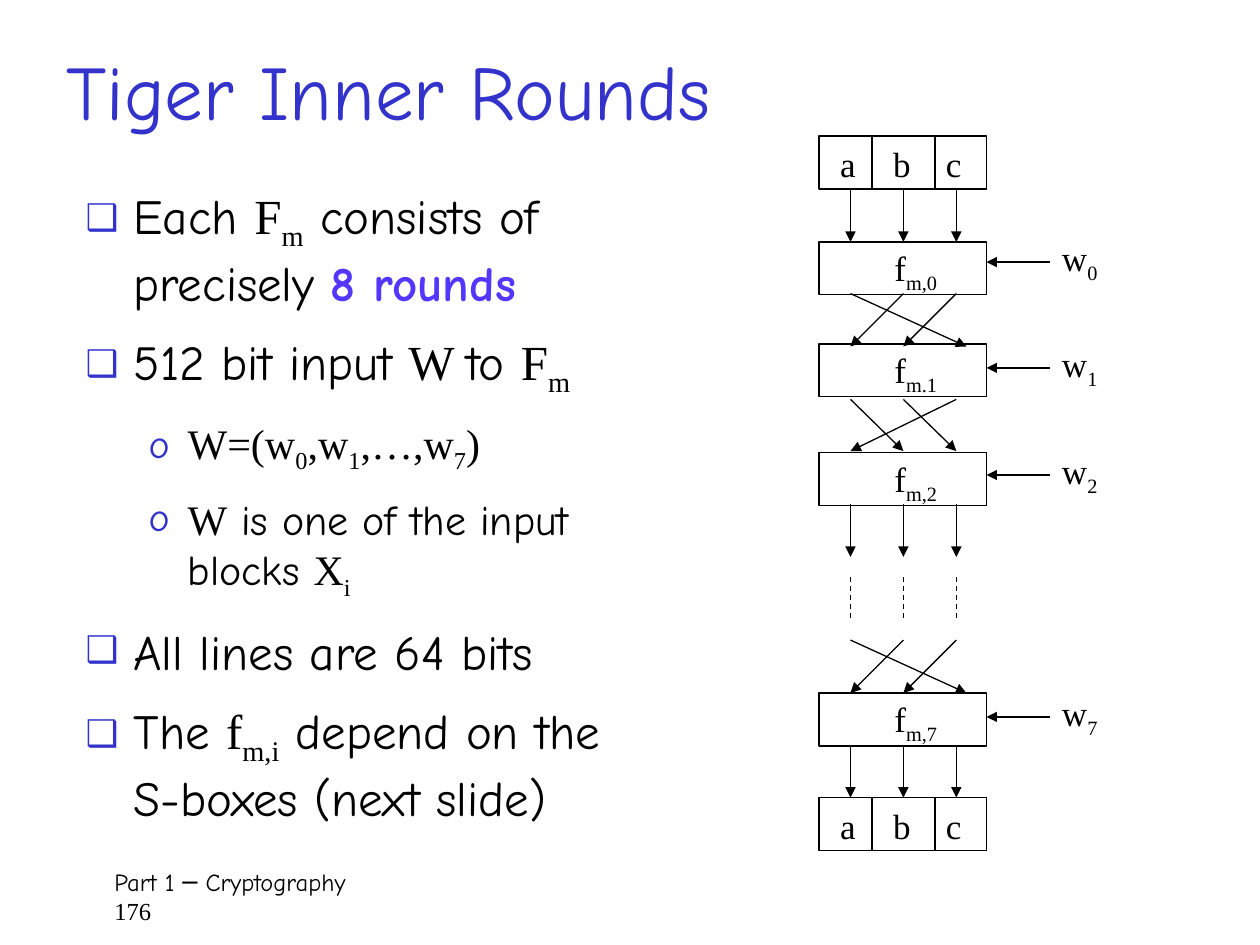
from lxml.etree import SubElement
from pptx import Presentation
from pptx.dml.color import RGBColor
from pptx.enum.dml import MSO_LINE
from pptx.enum.shapes import MSO_CONNECTOR, MSO_SHAPE
from pptx.enum.text import MSO_ANCHOR, MSO_AUTO_SIZE, PP_ALIGN
from pptx.oxml.ns import qn
from pptx.util import Inches, Pt

COLORS = {"ink": "000000", "accent": "3333CC", "strong": "5437FF"}
SANS, SERIF = "Comic Neue", "Times New Roman"

# Each bullet: level, then (text, style) pieces
BULLETS = [
    (0, [("Each ", "plain"), ("F", "math"), ("m", "sub"),
         (" consists of precisely ", "plain"), ("8 rounds", "strong")]),
    (0, [("512 bit input ", "plain"), ("W ", "math"), ("to ", "plain"),
         ("F", "math"), ("m", "sub")]),
    (1, [("W=(w", "math"), ("0", "sub"), (",w", "math"), ("1", "sub"),
         (",…,w", "math"), ("7", "sub"), (")", "math")]),
    (1, [("W", "math"), (" is one of the input blocks ", "plain"),
         ("X", "math"), ("i", "sub")]),
    (0, [("All lines are 64 bits", "plain")]),
    (0, [("The ", "plain"), ("f", "math"), ("m,i", "sub"),
         (" depend on the S-boxes (next slide)", "plain")]),
]
# Per level: size, left margin, hanging indent, symbol, symbol size in percent
LEVELS = [(28, 0.38, -0.38, "❑", 75), (24, 0.81, -0.31, "o", 95)]

# Diagram measures in inches, from the diagram's top left corner
BOX_WIDTH, BOX_HEIGHT = 1.33, 0.42
LANES = [0.25, 0.67, 1.09]
LONG_CROSSING_END = 1.17
REGISTER_TOPS = [0, 5.25]
# Round: function index, key index, box top, key arrow height
ROUNDS = [("m,0", "0", 0.84, 1.0), ("m.1", "1", 1.65, 1.84),
          ("m,2", "2", 2.51, 2.69), ("m,7", "7", 4.42, 4.61)]
STRAIGHT = list(zip(LANES, LANES))
ROTATE_LEFT = [(LANES[1], LANES[0]), (LANES[2], LANES[1]),
               (LANES[0], LONG_CROSSING_END)]
ROTATE_RIGHT = [(LANES[2], LANES[0]), (LANES[0], LANES[1]),
                (LANES[1], LANES[2])]
# Flow between boxes: start height, end height, lane pairs
FLOWS = [(0.42, 0.84, STRAIGHT), (1.25, 1.67, ROTATE_LEFT),
         (2.09, 2.5, ROTATE_RIGHT), (2.92, 3.34, STRAIGHT),
         (4.0, 4.42, ROTATE_LEFT), (4.84, 5.25, STRAIGHT)]
ELLIPSIS = (3.5, 3.84)


def color(name):
    return RGBColor.from_string(COLORS[name])


def place(shape, box):
    shape.left, shape.top, shape.width, shape.height = map(Inches, box)


def style(run, size, font=SANS, ink="ink"):
    run.font.size = Pt(size)
    run.font.name = font
    run.font.color.rgb = color(ink)


def add_pieces(paragraph, pieces, size):
    """Add runs in the plain, math, sub (lowered) or strong style."""
    for text, kind in pieces:
        run = paragraph.add_run()
        run.text = text
        style(run, size, SERIF if kind in ("math", "sub") else SANS,
              "strong" if kind == "strong" else "ink")
        run.font.bold = kind == "strong"
        if kind == "sub":
            run.font._element.set("baseline", "-25000")


def add_bullet(paragraph, margin, indent, symbol, percent):
    properties = paragraph._p.get_or_add_pPr()
    properties.set("marL", str(Inches(margin)))
    properties.set("indent", str(Inches(indent)))
    tint = SubElement(properties, qn("a:buClr"))
    SubElement(tint, qn("a:srgbClr"), val=COLORS["accent"])
    SubElement(properties, qn("a:buSzPct"), val=str(percent * 1000))
    SubElement(properties, qn("a:buFont"), typeface=SANS)
    SubElement(properties, qn("a:buChar"), char=symbol)


def fill_title(title, box):
    place(title, box)
    frame = title.text_frame
    frame.text = "Tiger Inner Rounds"
    frame.auto_size = MSO_AUTO_SIZE.NONE
    frame.vertical_anchor = MSO_ANCHOR.MIDDLE
    frame.paragraphs[0].alignment = PP_ALIGN.CENTER
    style(frame.paragraphs[0].runs[0], 44, ink="accent")


def fill_body(body, box):
    place(body, box)
    frame = body.text_frame
    frame.auto_size = MSO_AUTO_SIZE.NONE
    for index, (level, pieces) in enumerate(BULLETS):
        paragraph = frame.add_paragraph() if index else frame.paragraphs[0]
        size, *bullet = LEVELS[level]
        paragraph.level = level
        paragraph.space_before = Pt(size * 0.2)
        paragraph.space_after = Pt(6)
        add_bullet(paragraph, *bullet)
        add_pieces(paragraph, pieces, size)


def add_footer(slide, box):
    frame = slide.shapes.add_textbox(*map(Inches, box)).text_frame
    frame.word_wrap = True
    frame.text = "Part 1 ─ Cryptography\n176"
    for paragraph, font in zip(frame.paragraphs, (SANS, SERIF)):
        style(paragraph.runs[0], 14, font)


def add_label(slide, box, pieces, spacing=1.0):
    frame = slide.shapes.add_textbox(*map(Inches, box)).text_frame
    frame.word_wrap = False
    frame.auto_size = MSO_AUTO_SIZE.SHAPE_TO_FIT_TEXT
    frame.paragraphs[0].line_spacing = spacing
    add_pieces(frame.paragraphs[0], pieces, 20)


def add_box(slide, left, top):
    box = slide.shapes.add_shape(
        MSO_SHAPE.RECTANGLE, *map(Inches, (left, top, BOX_WIDTH, BOX_HEIGHT)))
    box.shadow.inherit = False
    box.fill.background()
    box.line.color.rgb = color("ink")
    box.line.width = Pt(0.75)


def add_line(slide, start, end, arrow=False, dashed=False):
    connector = slide.shapes.add_connector(
        MSO_CONNECTOR.STRAIGHT, *map(Inches, (*start, *end)))
    connector.line.color.rgb = color("ink")
    connector.line.width = Pt(0.75)
    if dashed:
        connector.line.dash_style = MSO_LINE.DASH
    if arrow:
        SubElement(connector.line._get_or_add_ln(), qn("a:tailEnd"),
                   type="triangle")
    SubElement(connector._element.spPr, qn("a:effectLst"))


def add_register(slide, left, top):
    """Draw the box of three words a, b and c."""
    for index, word in enumerate("abc"):
        add_label(slide, (left + 0.07 + 0.42 * index, top + 0.12, 0.36, 0.3),
                  [(word, "math")], 0.6)
    add_box(slide, left, top)
    for divider in (left + 0.42, left + 0.92):
        add_line(slide, (divider, top + BOX_HEIGHT), (divider, top))


def add_round(slide, left, top, key_y, function, key):
    add_box(slide, left, top)
    add_label(slide, (left + 0.5, top - 0.01, 0.58, 0.43),
              [("f", "math"), (function, "sub")])
    key_x = left + BOX_WIDTH + 0.5
    add_label(slide, (key_x, key_y - 0.25, 0.5, 0.43),
              [("w", "math"), (key, "sub")])
    add_line(slide, (key_x, key_y), (left + BOX_WIDTH, key_y), arrow=True)


def add_diagram(slide, left, top):
    for register_top in REGISTER_TOPS:
        add_register(slide, left, top + register_top)
    for function, key, box_top, key_y in ROUNDS:
        add_round(slide, left, top + box_top, top + key_y, function, key)
    for start, end, lanes in FLOWS:
        for source, target in lanes:
            add_line(slide, (left + source, top + start),
                     (left + target, top + end), arrow=True)
    for lane in LANES:
        add_line(slide, *((left + lane, top + y) for y in ELLIPSIS),
                 dashed=True)


def main():
    deck = Presentation()
    deck.slide_width, deck.slide_height = Inches(10), Inches(7.5)
    slide = deck.slides.add_slide(deck.slide_layouts[1])
    fill_title(slide.shapes.title, (0.17, 0.25, 5.83, 0.92))
    fill_body(slide.placeholders[1], (0.58, 1.42, 4.58, 5.25))
    add_footer(slide, (0.81, 6.83, 8.52, 0.5))
    add_diagram(slide, 6.5, 1.08)
    deck.save("out.pptx")


if __name__ == "__main__":
    main()
